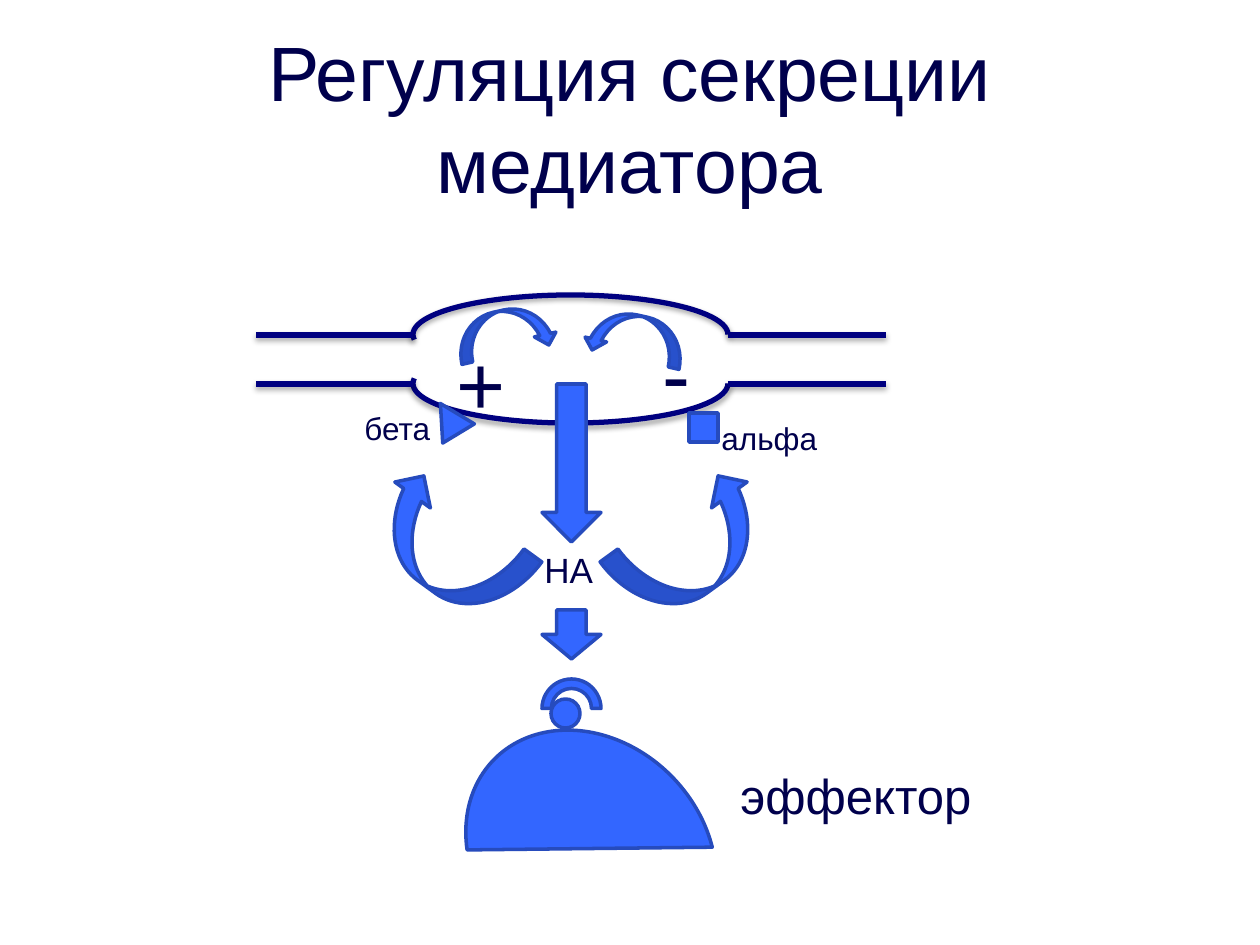
from pptx import Presentation
from pptx.dml.color import RGBColor
from pptx.enum.shapes import MSO_CONNECTOR as Link, MSO_SHAPE as Kind
from pptx.enum.text import MSO_ANCHOR as Anchor, MSO_AUTO_SIZE as Fit, PP_ALIGN as Align
from pptx.oxml import parse_xml
from pptx.util import Emu, Pt

SCALE = 914400 / 126
BLUE = RGBColor(0x33, 0x66, 0xFF)
EDGE = RGBColor(0x26, 0x4B, 0xBD)
NAVY = RGBColor(0x00, 0x00, 0x80)
INK = RGBColor(0x00, 0x00, 0x4C)
WHITE = RGBColor(0xFF, 0xFF, 0xFF)
SHADOW = (
    '<a:effectLst xmlns:a="http://schemas.openxmlformats.org/drawingml/2006/main">'
    '<a:outerShdw blurRad="40000" dist="23000" dir="5400000" rotWithShape="0">'
    '<a:srgbClr val="000000"><a:alpha val="35000"/></a:srgbClr>'
    '</a:outerShdw></a:effectLst>'
)


def px(*sizes):
    return [Emu(round(size * SCALE)) for size in sizes]


def set_text(shape, text, size, wrap=True, **style):
    frame = shape.text_frame
    frame.text = text
    frame.word_wrap = wrap
    for name, value in style.items():
        setattr(frame, name, value)
    para = frame.paragraphs[0]
    font = para.runs[0].font
    for name, value in {"name": "Arial", "size": Pt(size)}.items():
        setattr(font, name, value)
    font.color.rgb = INK
    return para


def add_title(slide, text, box):
    title = slide.shapes.title
    for name, value in zip(("left", "top", "width", "height"), px(*box)):
        setattr(title, name, value)
    para = set_text(title, text, 44, vertical_anchor=Anchor.MIDDLE, auto_size=Fit.NONE)
    para.alignment = Align.CENTER


def add_label(slide, text, box, size, wrap=False):
    label = slide.shapes.add_textbox(*px(*box))
    set_text(label, text, size, wrap, auto_size=Fit.SHAPE_TO_FIT_TEXT)


def set_line(shape, color, width):
    shape.line.color.rgb = color
    shape.line.width = Pt(width)


def add_shape(slide, kind, box, turn=0, adj=(), flip=False):
    shape = slide.shapes.add_shape(kind, *px(*box))
    shape.shadow.inherit = False
    shape.rotation = turn
    shape.fill.solid()
    shape.fill.fore_color.rgb = BLUE
    set_line(shape, EDGE, 2)
    for spot, value in enumerate(adj):
        shape.adjustments[spot] = value
    if flip:
        shape._element.spPr.xfrm.set("flipH", "1")


def add_membrane(group, shape):
    set_line(shape, NAVY, 3)
    shape._element.spPr.append(parse_xml(SHADOW))


def add_nerve(slide):
    """Draw the nerve ending: two arcs joined to four straight walls."""
    group = slide.shapes.add_group_shape()
    for top, flip in ((295, False), (344, True)):
        arc = group.shapes.add_shape(Kind.ARC, *px(413, top, 315, 79))
        arc.adjustments[0] = 106.86
        arc.adjustments[1] = 0
        arc.fill.background()
        if flip:
            arc._element.spPr.xfrm.set("flipV", "1")
        add_membrane(group, arc)
    for left, right in ((728, 886), (256, 413)):
        for y in (335, 384):
            wall = group.shapes.add_connector(Link.STRAIGHT, *px(left, y, right, y))
            add_membrane(group, wall)


def main():
    deck = Presentation()
    deck.slide_width, deck.slide_height = px(1260, 945)
    slide = deck.slides.add_slide(deck.slide_layouts[5])
    slide.background.fill.solid()
    slide.background.fill.fore_color.rgb = WHITE
    add_title(slide, "Регуляция секреции медиатора", (63, 38, 1134, 158))

    add_shape(slide, Kind.CHORD, (478, 719, 226, 273), 135.2, (28.42, 132.53))
    add_nerve(slide)
    add_shape(slide, Kind.DOWN_ARROW, (542, 384, 59, 158))
    add_label(slide, "НА", (532, 542, 74, 55), 20)
    add_shape(slide, Kind.DOWN_ARROW, (542, 610, 59, 49))
    add_shape(slide, Kind.OVAL, (551, 699, 29, 29))
    add_shape(slide, Kind.BLOCK_ARC, (542, 679, 59, 59), adj=(108, 0, 0.16))

    for left, turn, flip in ((364, 216.1, False), (610, 143.9, True)):
        add_shape(slide, Kind.CURVED_DOWN_ARROW, (left, 504, 168, 88), turn, flip=flip)
    add_label(slide, "альфа", (709, 413, 122, 50), 18)
    add_label(slide, "бета", (352, 403, 92, 50), 18)
    add_shape(slide, Kind.ISOSCELES_TRIANGLE, (431, 401, 37, 35), 328.8)
    add_shape(slide, Kind.RECTANGLE, (689, 413, 29, 29))

    for sign, left, top in (("+", 444, 325), ("-", 650, 315)):
        add_label(slide, sign, (left, top, 79, 115), 48, True)
    for left, top, turn, flip in ((456, 310, 347.4, False), (585, 315, 12.6, True)):
        add_shape(slide, Kind.CURVED_DOWN_ARROW, (left, top, 100, 44), turn, flip=flip)
    add_label(slide, "эффектор", (728, 759, 260, 72), 28)
    deck.save("out.pptx")


if __name__ == "__main__":
    main()
